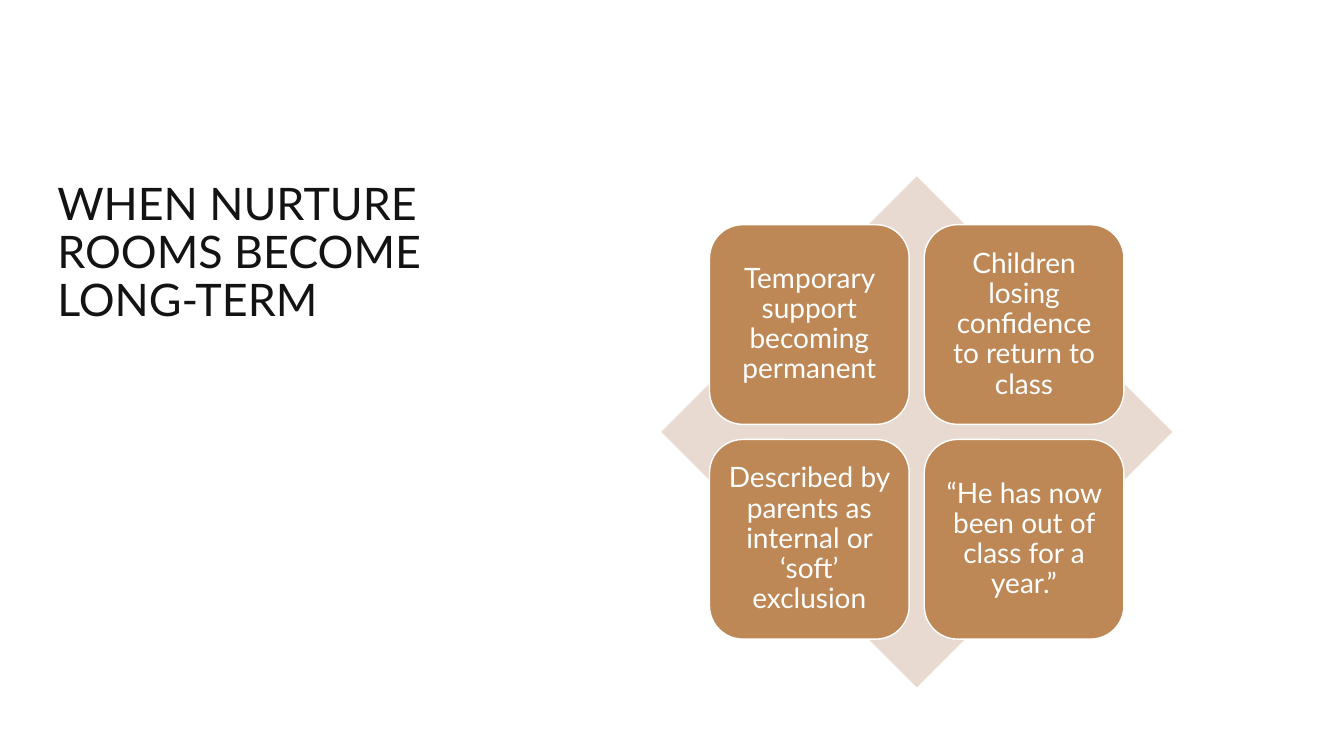
"""Build the slide on long-term use of nurture rooms."""
from dataclasses import dataclass

from pptx import Presentation
from pptx.dml.color import RGBColor
from pptx.enum.shapes import MSO_SHAPE
from pptx.enum.text import MSO_ANCHOR, PP_ALIGN
from pptx.shapes.autoshape import Shape
from pptx.slide import Slide
from pptx.util import Pt


@dataclass(frozen=True)
class Theme:
    font: str = "Lato"
    title_size: float = 32
    tile_size: float = 20
    ink: str = "131313"
    white: str = "FFFFFF"
    tile: str = "BE8856"
    diamond: str = "E8DAD1"


@dataclass(frozen=True)
class Box:
    left: float
    top: float
    width: float
    height: float


@dataclass(frozen=True)
class Tile:
    col: int
    row: int
    text: str


THEME = Theme()
TITLE = Box(33.84, 126, 326.16, 365)
DIAMOND = Box(472.3, 126, 365, 365)
TILE_SIDE = 142.6
TILE_PITCH = 153.4
TILES = [
    Tile(0, 0, "Temporary support becoming permanent"),
    Tile(1, 0, "Children losing confidence to return to class"),
    Tile(0, 1, "Described by parents as internal or ‘soft’ exclusion"),
    Tile(1, 1, "“He has now been out of class for a year.”"),
]


def write(sp: Shape, text: str, *, size: float, color: str,
          align: PP_ALIGN = PP_ALIGN.LEFT, anchor: MSO_ANCHOR = MSO_ANCHOR.TOP,
          inset_x: float = 7.2, inset_y: float = 3.6) -> None:
    """Write one formatted paragraph into a shape."""
    tf = sp.text_frame
    tf.word_wrap = True
    tf.vertical_anchor = anchor
    tf.margin_left = tf.margin_right = Pt(inset_x)
    tf.margin_top = tf.margin_bottom = Pt(inset_y)
    p = tf.paragraphs[0]
    p.alignment = align
    p.line_spacing = 0.9
    r = p.add_run()
    r.text = text
    r.font.name = THEME.font
    r.font.size = Pt(size)
    r.font.color.rgb = RGBColor.from_string(color)


def add_block(s: Slide, kind: MSO_SHAPE, box: Box, fill: str,
              line: str | None = None) -> Shape:
    """Add a flat filled shape with an optional outline."""
    sp = s.shapes.add_shape(kind, Pt(box.left), Pt(box.top), Pt(box.width), Pt(box.height))
    sp.shadow.inherit = False
    sp.fill.solid()
    sp.fill.fore_color.rgb = RGBColor.from_string(fill)
    if line:
        sp.line.color.rgb = RGBColor.from_string(line)
        sp.line.width = Pt(1)
    else:
        sp.line.fill.background()
    return sp


def add_title(s: Slide, text: str) -> None:
    """Add the slide title."""
    sp = s.shapes.add_textbox(Pt(TITLE.left), Pt(TITLE.top), Pt(TITLE.width), Pt(TITLE.height))
    write(sp, text, size=THEME.title_size, color=THEME.ink)


def add_tile(s: Slide, tile: Tile) -> None:
    """Add one rounded tile of the grid centred on the diamond."""
    margin = (DIAMOND.width - TILE_SIDE - TILE_PITCH) / 2
    box = Box(DIAMOND.left + margin + tile.col * TILE_PITCH,
              DIAMOND.top + margin + tile.row * TILE_PITCH, TILE_SIDE, TILE_SIDE)
    sp = add_block(s, MSO_SHAPE.ROUNDED_RECTANGLE, box, THEME.tile, THEME.white)
    write(sp, tile.text, size=THEME.tile_size, color=THEME.white, align=PP_ALIGN.CENTER,
          anchor=MSO_ANCHOR.MIDDLE, inset_x=5.8, inset_y=5.8)


def main() -> None:
    """Create and save the presentation."""
    prs = Presentation()
    prs.slide_width, prs.slide_height = Pt(960), Pt(540)
    s = prs.slides.add_slide(prs.slide_layouts[6])
    add_title(s, "WHEN NURTURE ROOMS BECOME LONG-TERM")
    add_block(s, MSO_SHAPE.DIAMOND, DIAMOND, THEME.diamond)
    for tile in TILES:
        add_tile(s, tile)
    prs.save("out.pptx")


if __name__ == "__main__":
    main()
